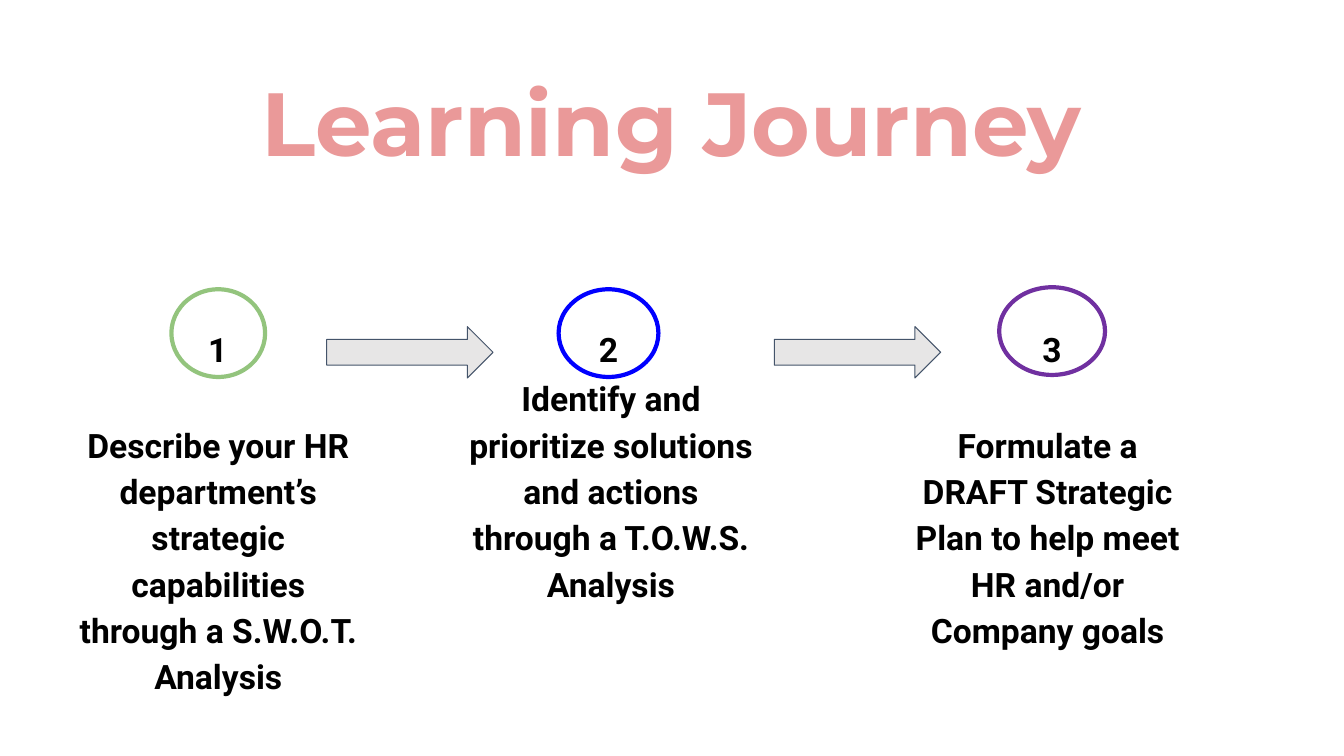
import pptx
import pptx.dml.color
import pptx.enum.shapes
import pptx.enum.text
import pptx.util

RGBColor = pptx.dml.color.RGBColor
Shape = pptx.enum.shapes.MSO_SHAPE
Anchor = pptx.enum.text.MSO_ANCHOR

PX = 9144  # EMU per px, 100 px to the inch
INSET = 13
LINE_HEIGHT = 46

CORAL = RGBColor(0xEA, 0x99, 0x99)
GREEN = RGBColor(0x93, 0xC4, 0x7D)
BLUE = RGBColor(0x00, 0x00, 0xFF)
PURPLE = RGBColor(0x70, 0x30, 0xA0)
BLACK = RGBColor(0x00, 0x00, 0x00)
GREY = RGBColor(0xE7, 0xE6, 0xE6)
SLATE = RGBColor(0x44, 0x54, 0x6A)

TITLE_FONT = {"name": "Montserrat", "size": pptx.util.Pt(64), "bold": True}
STEP_FONT = {"name": "Roboto", "size": pptx.util.Pt(24), "bold": True}


def apply(target, values):
    for name, value in values.items():
        setattr(target, name, value)


def px(*lengths):
    return [length * PX for length in lengths]


class JourneySlide:
    def __init__(self, deck):
        self.slide = deck.slides.add_slide(deck.slide_layouts[5])

    def fill_text(self, box, text, font, color, spacing, anchor=Anchor.TOP, bottom=INSET):
        frame = box.text_frame
        apply(frame, {
            "word_wrap": True,
            "auto_size": pptx.enum.text.MSO_AUTO_SIZE.NONE,
            "vertical_anchor": anchor,
            "margin_left": INSET * PX, "margin_right": INSET * PX,
            "margin_top": INSET * PX, "margin_bottom": bottom * PX,
        })
        paragraph = frame.paragraphs[0]
        apply(paragraph, {
            "alignment": pptx.enum.text.PP_ALIGN.CENTER,
            "line_spacing": spacing,
        })
        run = paragraph.add_run()
        run.text = text
        apply(run.font, font)
        run.font.color.rgb = color

    def title(self, text, left, top, width, height):
        title = self.slide.shapes.title
        apply(title, dict(zip(("left", "top", "width", "height"),
                              px(left, top, width, height))))
        self.fill_text(title, text, TITLE_FONT, CORAL, 0.9)

    def shape(self, shapes, kind, bounds, line, weight, fill=None):
        shape = shapes.add_shape(kind, *px(*bounds))
        shape.shadow.inherit = False
        if fill is None:
            shape.fill.background()
        else:
            shape.fill.solid()
            shape.fill.fore_color.rgb = fill
        shape.line.color.rgb = line
        shape.line.width = pptx.util.Pt(weight)

    def step(self, number, color, circle, text, text_bounds, lines_below):
        group = self.slide.shapes.add_group_shape().shapes
        self.shape(group, Shape.OVAL, circle, color, 3)

        # Description, raised from the bottom by whole lines
        description = group.add_textbox(*px(*text_bounds))
        self.fill_text(description, text, STEP_FONT, BLACK, 1.15, Anchor.BOTTOM,
                       INSET + LINE_HEIGHT * lines_below)

        # Number, centred across its circle
        left, _, width, _ = circle
        number_width = round(width * 0.735)
        number_left = left + (width - number_width) // 2
        label = group.add_textbox(*px(number_left, 307, number_width, 47))
        self.fill_text(label, str(number), STEP_FONT, BLACK, 1.15)

    def arrow(self, left):
        self.shape(self.slide.shapes, Shape.RIGHT_ARROW, (left, 324, 165, 51),
                   SLATE, 0.75, GREY)


def main():
    deck = pptx.Presentation()
    deck.slide_width, deck.slide_height = px(1333, 750)
    journey = JourneySlide(deck)
    journey.title("Learning Journey", 45, 65, 1242, 84)

    # Steps: colour, circle, description, description bounds, lines below
    steps = [
        (GREEN, (170, 287, 93, 87),
         "Describe your HR department’s strategic capabilities through a S.W.O.T. Analysis",
         (66, 388, 301, 362), 1),
        (BLUE, (554, 287, 99, 87),
         "Identify and prioritize solutions and actions through a T.O.W.S. Analysis",
         (444, 396, 324, 354), 3),
        (PURPLE, (991, 285, 105, 87),
         "Formulate a DRAFT Strategic Plan to help meet HR and/or Company goals",
         (893, 437, 292, 313), 2),
    ]
    for number, step in enumerate(steps, start=1):
        journey.step(number, *step)

    # Arrows between the steps
    for left in (324, 768):
        journey.arrow(left)

    deck.save("out.pptx")


if __name__ == "__main__":
    main()
